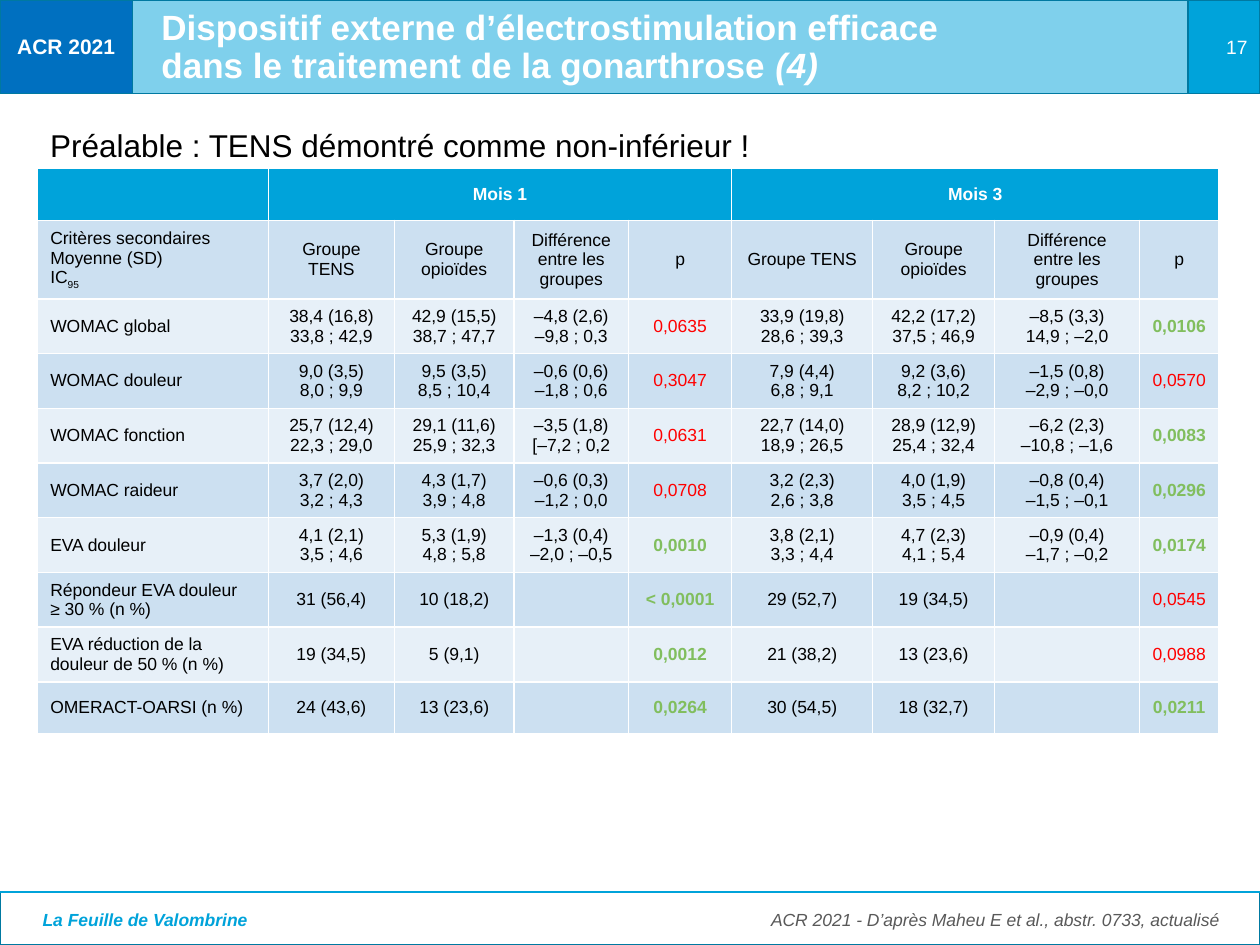
from dataclasses import dataclass

from lxml import etree
from pptx import Presentation
from pptx.dml.color import RGBColor
from pptx.enum.shapes import MSO_CONNECTOR, MSO_SHAPE
from pptx.enum.text import MSO_ANCHOR, MSO_AUTO_SIZE, PP_ALIGN
from pptx.oxml.ns import qn
from pptx.util import Cm, Pt

LEFT, CENTER, RIGHT = PP_ALIGN.LEFT, PP_ALIGN.CENTER, PP_ALIGN.RIGHT
MIDDLE = MSO_ANCHOR.MIDDLE
RECTANGLE = MSO_SHAPE.RECTANGLE
STRAIGHT = MSO_CONNECTOR.STRAIGHT


@dataclass(frozen=True)
class Theme:
    font: str = "Arial"
    cyan: RGBColor = RGBColor(0x00, 0xA3, 0xDA)
    blue: RGBColor = RGBColor(0x00, 0x70, 0xC0)
    outline: RGBColor = RGBColor(0x00, 0x79, 0xA1)
    white: RGBColor = RGBColor(0xFF, 0xFF, 0xFF)
    black: RGBColor = RGBColor(0x00, 0x00, 0x00)
    grey: RGBColor = RGBColor(0x59, 0x59, 0x59)
    red: RGBColor = RGBColor(0xFF, 0x00, 0x00)
    green: RGBColor = RGBColor(0x81, 0xBE, 0x5E)
    dark_band: RGBColor = RGBColor(0xCC, 0xE0, 0xF1)
    light_band: RGBColor = RGBColor(0xE7, 0xF0, 0xF8)
    title_size: Pt = Pt(20)
    lead_size: Pt = Pt(18)
    badge_size: Pt = Pt(12)
    number_size: Pt = Pt(11)
    small_size: Pt = Pt(10)


theme = Theme()


def add_span(para, text, color, **formats):
    span = para.add_run()
    span.text = text
    span.font.color.rgb = color
    settings = {"name": theme.font, "size": theme.small_size, "bold": False, "italic": False}
    for name, value in (settings | formats).items():
        setattr(span.font, name, value)
    return span


def write_lines(frame, text, color, align=LEFT, **formats):
    for index, line in enumerate(text.split("\n")):
        para = frame.add_paragraph() if index else frame.paragraphs[0]
        para.alignment = align
        add_span(para, line, color, **formats)
    return para


deck = Presentation()
deck.slide_width, deck.slide_height = Cm(25.4), Cm(19.05)
page = deck.slides.add_slide(deck.slide_layouts[5])

blocks = [
    (0, 17.98, 25.4, 1.07, theme.white, "", {}),
    (2.67, 0, 21.28, 1.88, theme.cyan, "", {}),
    (0, 0, 2.67, 1.88, theme.blue, "ACR 2021",
     {"align": CENTER, "size": theme.badge_size, "bold": True}),
    (23.95, 0, 1.45, 1.88, theme.cyan, "17", {"align": RIGHT, "size": theme.number_size}),
]
panels = []
for left, top, width, height, fill, text, formats in blocks:
    panel = page.shapes.add_shape(RECTANGLE, Cm(left), Cm(top), Cm(width), Cm(height))
    panel.shadow.inherit = False
    panel.fill.solid()
    panel.fill.fore_color.rgb = fill
    panel.line.color.rgb = theme.outline
    panel.line.width = Pt(0)
    panel.text_frame.vertical_anchor = MIDDLE
    if text:
        write_lines(panel.text_frame, text, theme.white, **formats)
    panels.append(panel)
title_band = panels[1]
band_color = title_band.fill._xPr.find(qn("a:solidFill")).find(qn("a:srgbClr"))
etree.SubElement(band_color, qn("a:alpha")).set("val", "50000")

rule = page.shapes.add_connector(STRAIGHT, Cm(0), Cm(17.98), Cm(25.4), Cm(17.98))
rule.line.color.rgb = theme.cyan
rule.line.width = Pt(0.75)
etree.SubElement(rule._element.spPr, qn("a:effectLst"))

title = page.shapes.title
title.left, title.top, title.width, title.height = Cm(3), Cm(0.1), Cm(20.35), Cm(1.73)
title.text_frame.vertical_anchor = MIDDLE
title.text_frame.word_wrap = True
title.text_frame.auto_size = MSO_AUTO_SIZE.NONE
heading = title.text_frame.paragraphs[0]
for name, value in {"alignment": LEFT, "line_spacing": 0.9, "space_before": Pt(10)}.items():
    setattr(heading, name, value)
title_format = {"size": theme.title_size, "bold": True}
add_span(heading, "Dispositif externe d’électrostimulation efficace", theme.white, **title_format)
heading.add_line_break()
add_span(heading, "dans le traitement de la gonarthrose ", theme.white, **title_format)
add_span(heading, "(4)", theme.white, italic=True, **title_format)
page.shapes._spTree.append(title._element)

labels = [
    (0.61, 18.19, 8.81, 0.69, "La Feuille de Valombrine", theme.cyan, True,
     {"bold": True, "italic": True}),
    (14.66, 18.19, 10.26, 0.69, "ACR 2021 - D’après Maheu E et al., abstr. 0733, actualisé ",
     theme.grey, True, {"align": RIGHT, "italic": True}),
    (0.76, 2.41, 14.76, 1.02, "Préalable : TENS démontré comme non-inférieur !",
     theme.black, False, {"size": theme.lead_size}),
]
for left, top, width, height, text, color, wrap, formats in labels:
    box = page.shapes.add_textbox(Cm(left), Cm(top), Cm(width), Cm(height))
    box.text_frame.word_wrap = wrap
    box.text_frame.auto_size = MSO_AUTO_SIZE.SHAPE_TO_FIT_TEXT
    write_lines(box.text_frame, text, color, **formats)

group_heads = ["Groupe TENS", "Groupe opioïdes", "Différence entre les groupes", "p"]
rows = [
    ["", "Mois 1", "", "", "", "Mois 3", "", "", ""],
    ["Critères secondaires\nMoyenne (SD)\nIC", *group_heads, *group_heads],
    ["WOMAC global", "38,4 (16,8)\n33,8 ; 42,9", "42,9 (15,5)\n38,7 ; 47,7",
     "–4,8 (2,6)\n–9,8 ; 0,3", "0,0635", "33,9 (19,8)\n28,6 ; 39,3",
     "42,2 (17,2)\n37,5 ; 46,9", "–8,5 (3,3)\n14,9 ; –2,0", "0,0106"],
    ["WOMAC douleur", "9,0 (3,5)\n8,0 ; 9,9", "9,5 (3,5)\n8,5 ; 10,4",
     "–0,6 (0,6)\n–1,8 ; 0,6", "0,3047", "7,9 (4,4)\n6,8 ; 9,1",
     "9,2 (3,6)\n8,2 ; 10,2", "–1,5 (0,8)\n–2,9 ; –0,0", "0,0570"],
    ["WOMAC fonction", "25,7 (12,4)\n22,3 ; 29,0", "29,1 (11,6)\n25,9 ; 32,3",
     "–3,5 (1,8)\n[–7,2 ; 0,2", "0,0631", "22,7 (14,0)\n18,9 ; 26,5",
     "28,9 (12,9)\n25,4 ; 32,4", "–6,2 (2,3)\n–10,8 ; –1,6", "0,0083"],
    ["WOMAC raideur", "3,7 (2,0)\n3,2 ; 4,3", "4,3 (1,7)\n3,9 ; 4,8",
     "–0,6 (0,3)\n–1,2 ; 0,0", "0,0708", "3,2 (2,3)\n2,6 ; 3,8",
     "4,0 (1,9)\n3,5 ; 4,5", "–0,8 (0,4)\n–1,5 ; –0,1", "0,0296"],
    ["EVA douleur", "4,1 (2,1)\n3,5 ; 4,6", "5,3 (1,9)\n4,8 ; 5,8",
     "–1,3 (0,4)\n–2,0 ; –0,5", "0,0010", "3,8 (2,1)\n3,3 ; 4,4",
     "4,7 (2,3)\n4,1 ; 5,4", "–0,9 (0,4)\n–1,7 ; –0,2", "0,0174"],
    ["Répondeur EVA douleur\n≥ 30 % (n %)", "31 (56,4)", "10 (18,2)", "", "< 0,0001",
     "29 (52,7)", "19 (34,5)", "", "0,0545"],
    ["EVA réduction de la douleur de 50 % (n %)", "19 (34,5)", "5 (9,1)", "", "0,0012",
     "21 (38,2)", "13 (23,6)", "", "0,0988"],
    ["OMERACT-OARSI (n %)", "24 (43,6)", "13 (23,6)", "", "0,0264",
     "30 (54,5)", "18 (32,7)", "", "0,0211"],
]
column_widths = [4.65, 2.54, 2.41, 2.31, 2.08, 2.84, 2.46, 2.92, 1.6]
row_heights = [1.04, 1.58] + [1.1] * 7 + [1.04]
p_columns = (4, 8)

results = page.shapes.add_table(len(rows), len(column_widths), Cm(0.76), Cm(3.4),
                                Cm(sum(column_widths)), Cm(sum(row_heights))).table
for column, width in zip(results.columns, column_widths):
    column.width = Cm(width)
for row, height in zip(results.rows, row_heights):
    row.height = Cm(height)
for first in (1, 5):
    results.cell(0, first).merge(results.cell(0, first + 3))

for row_index, values in enumerate(rows):
    band = theme.dark_band if row_index % 2 else theme.light_band
    for column_index, text in enumerate(values):
        cell = results.cell(row_index, column_index)
        cell.vertical_anchor = MIDDLE
        cell.fill.solid()
        cell.fill.fore_color.rgb = band if row_index else theme.cyan
        if not text:
            continue
        color, bold = (theme.black, False) if row_index else (theme.white, True)
        if row_index > 1 and column_index in p_columns:
            bold = float(text.strip("< ").replace(",", ".")) < 0.05
            color = theme.green if bold else theme.red
        align = CENTER if column_index else LEFT
        last_para = write_lines(cell.text_frame, text, color, align, bold=bold)
        if row_index == 1 and column_index == 0:
            subscript = add_span(last_para, "95", color)
            subscript._r.get_or_add_rPr().set("baseline", "-25000")

deck.save("out.pptx")
